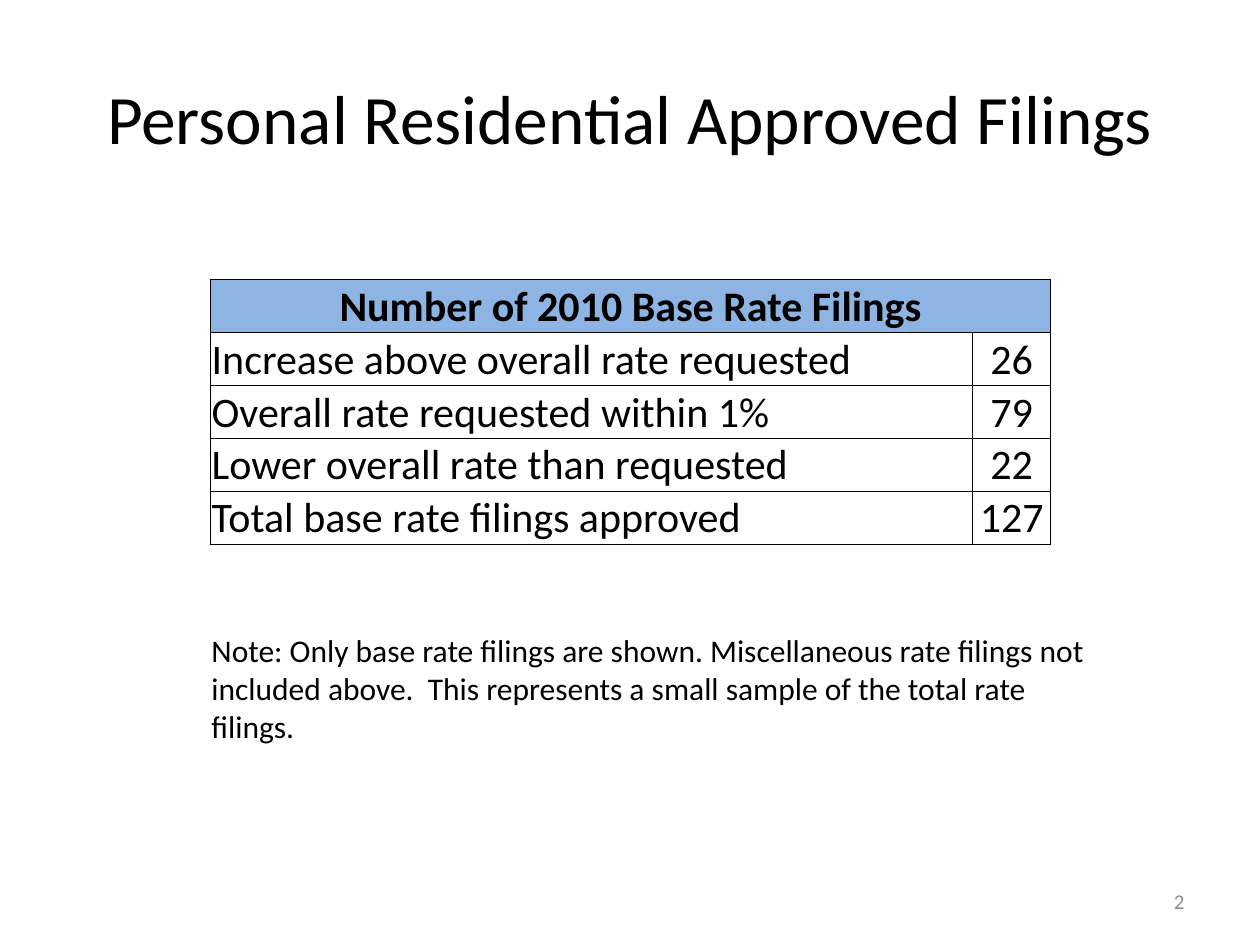
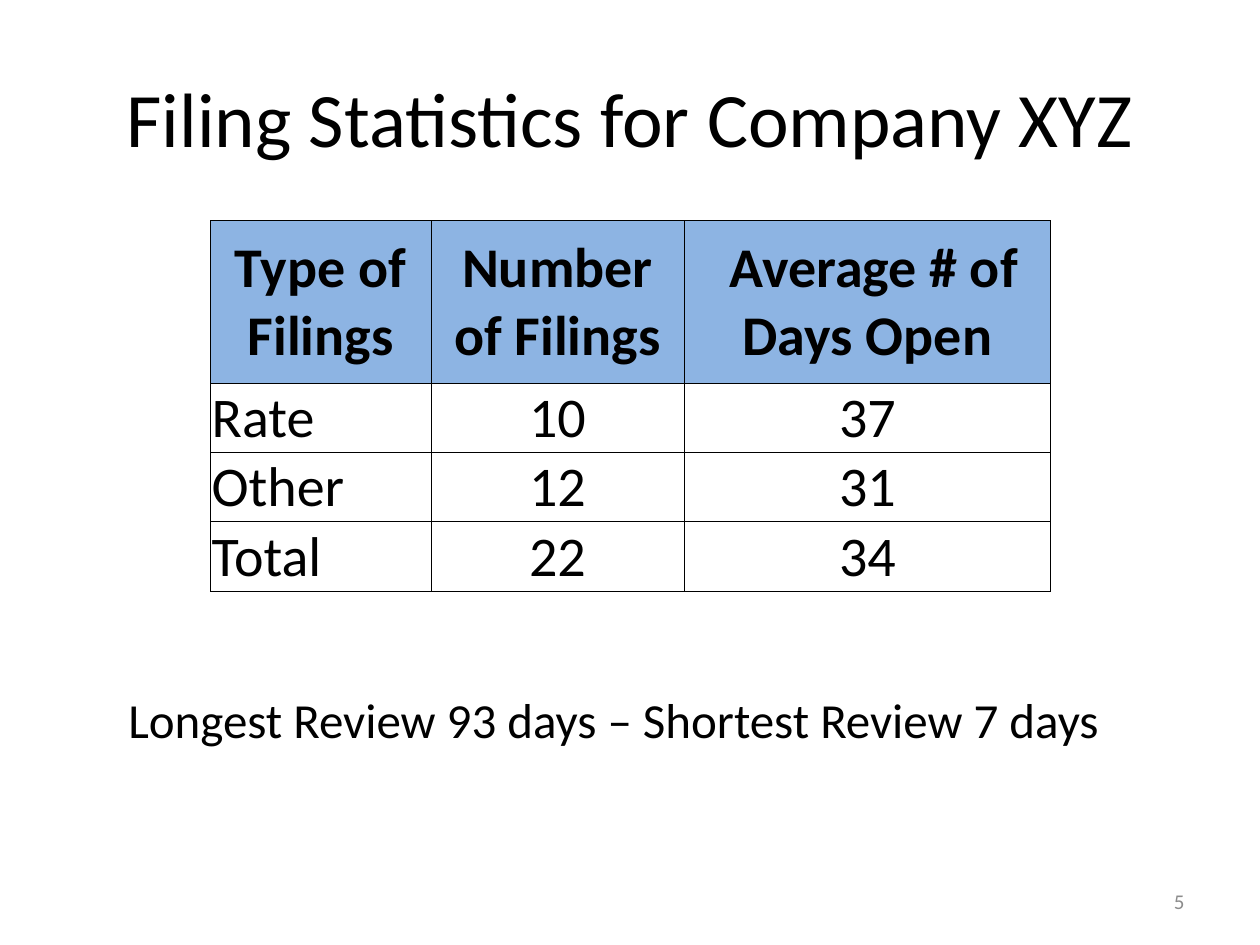
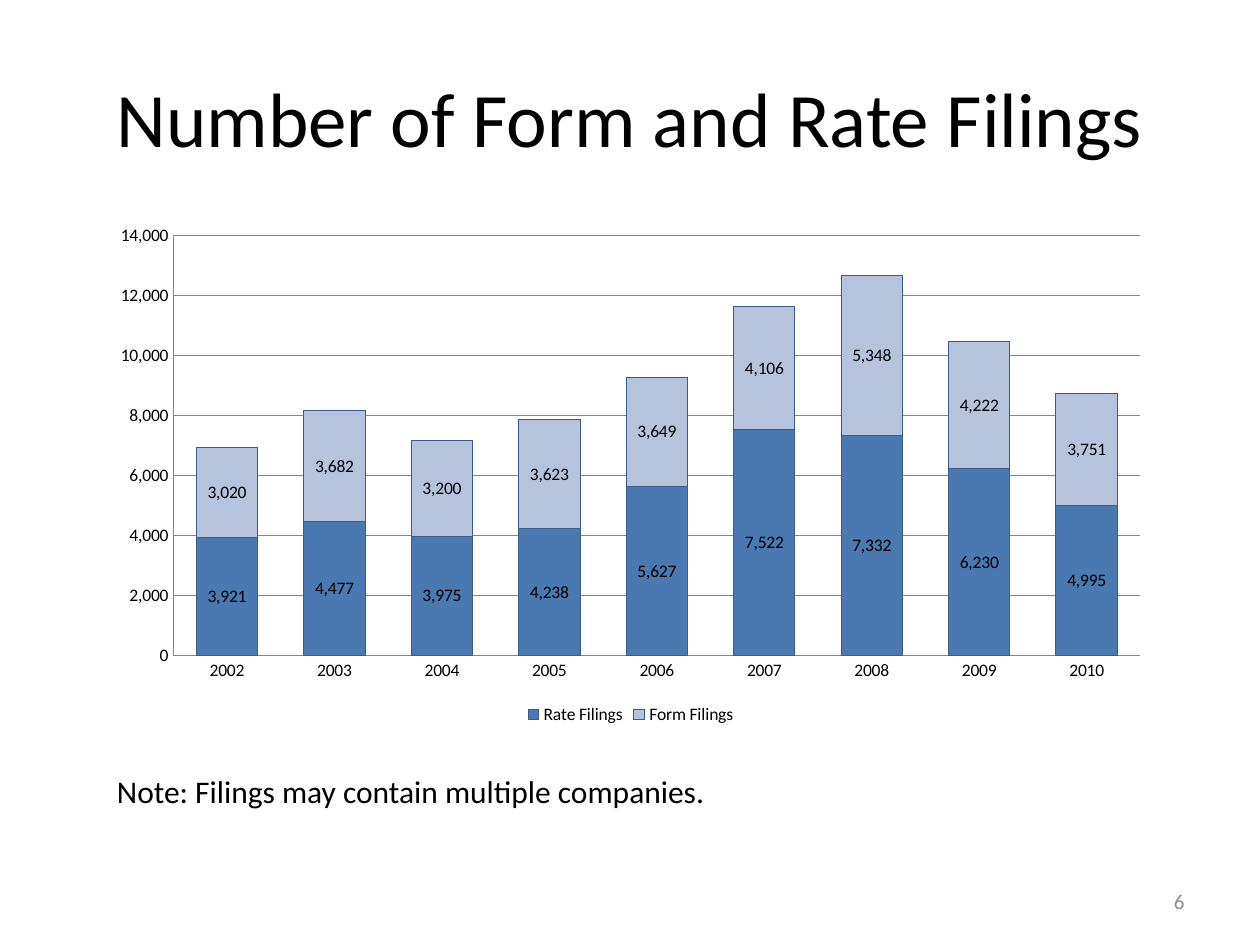
from lxml import etree
from pptx import Presentation
from pptx.chart.data import CategoryChartData
from pptx.dml.color import RGBColor
from pptx.enum.chart import XL_CHART_TYPE, XL_LABEL_POSITION, XL_LEGEND_POSITION, XL_TICK_MARK
from pptx.enum.text import MSO_ANCHOR, PP_ALIGN
from pptx.oxml import parse_xml
from pptx.oxml.ns import nsdecls
from pptx.util import Inches, Pt

STACKED = XL_CHART_TYPE.COLUMN_STACKED
LABEL_CENTER = XL_LABEL_POSITION.CENTER
LEGEND_BOTTOM = XL_LEGEND_POSITION.BOTTOM
NO_TICK = XL_TICK_MARK.NONE
MIDDLE, BOTTOM = MSO_ANCHOR.MIDDLE, MSO_ANCHOR.BOTTOM
LEFT, CENTER, RIGHT = PP_ALIGN.LEFT, PP_ALIGN.CENTER, PP_ALIGN.RIGHT

FONT = "Calibri"
BLACK = RGBColor(0x00, 0x00, 0x00)
PAGE_GRAY = RGBColor(0x8C, 0x8C, 0x8C)
HEADER_BLUE = RGBColor(0x8D, 0xB4, 0xE3)
RATE_BLUE = RGBColor(0x4A, 0x78, 0xB0)
FORM_BLUE = RGBColor(0xB5, 0xC3, 0xDC)
BAR_EDGE = RGBColor(0x38, 0x5D, 0x8A)
AXIS_GRAY = RGBColor(0x86, 0x86, 0x86)


def write(frame, text, size, align=LEFT, color=BLACK, bold=False):
    """Fill the first paragraph of a text frame with one formatted run."""
    paragraph = frame.paragraphs[0]
    paragraph.alignment = align
    run = paragraph.add_run()
    run.text = text
    run.font.name = FONT
    run.font.size = Pt(size)
    run.font.bold = bold
    run.font.color.rgb = color


def add_ruled_table(slide, rows, top, widths, heights, size, anchor):
    """Add a table with thin black rules, a blue header and centred figures."""
    table = slide.shapes.add_table(
        len(rows), len(widths), Inches(1.67), Inches(top),
        Inches(sum(widths)), Inches(sum(heights))).table
    table.horz_banding = False
    for column, width in zip(table.columns, widths):
        column.width = Inches(width)
    for r, (values, height) in enumerate(zip(rows, heights)):
        table.rows[r].height = Inches(height)
        for c in range(len(widths)):
            cell = table.cell(r, c)
            cell.vertical_anchor = anchor
            cell.margin_left = cell.margin_right = cell.margin_top = Inches(0.01)
            cell.margin_bottom = 0
            if r == 0:
                cell.fill.solid()
                cell.fill.fore_color.rgb = HEADER_BLUE
            else:
                cell.fill.background()
            properties = cell._tc.get_or_add_tcPr()
            for position, side in enumerate(("lnL", "lnR", "lnT", "lnB")):
                properties.insert(position, parse_xml(
                    f'<a:{side} {nsdecls("a")} w="{Pt(0.5)}"><a:solidFill>'
                    f'<a:srgbClr val="{BLACK}"/></a:solidFill></a:{side}>'))
            if c < len(values):
                align = LEFT if r and c == 0 else CENTER
                write(cell.text_frame, values[c], size, align, bold=r == 0)
    if len(rows[0]) == 1:
        table.cell(0, 0).merge(table.cell(0, len(widths) - 1))


prs = Presentation()
prs.slide_width, prs.slide_height = Inches(10), Inches(7.5)

# Title, title size, page number, note, note size, note box
pages = [
    ("Personal Residential Approved Filings", 39.6, "2",
     "Note: Only base rate filings are shown. Miscellaneous rate filings not "
     "included above.  This represents a small sample of the total rate filings.",
     18, (1.58, 4.96, 7.25, 1.01)),
    ("Filing Statistics for Company XYZ", 44, "5",
     "Longest Review 93 days – Shortest Review 7 days",
     28, (0.92, 5.42, 7.99, 0.57)),
    ("Number of Form and Rate Filings", 44, "6",
     "Note: Filings may contain multiple companies.",
     18, (0.83, 6.08, 6.08, 0.42)),
]
slides = []
for title, title_size, number, note, note_size, note_box in pages:
    slide = prs.slides.add_slide(prs.slide_layouts[5])
    heading = slide.shapes.title
    heading.left, heading.top = Inches(0.5), Inches(0.3)
    heading.width, heading.height = Inches(9), Inches(1.25)
    heading.text_frame.vertical_anchor = MIDDLE
    write(heading.text_frame, title, title_size, CENTER)

    page_number = slide.shapes.add_textbox(
        Inches(7.17), Inches(6.95), Inches(2.33), Inches(0.4)).text_frame
    page_number.word_wrap = True
    page_number.vertical_anchor = MIDDLE
    write(page_number, number, 12, RIGHT, PAGE_GRAY)

    remark = slide.shapes.add_textbox(*map(Inches, note_box)).text_frame
    remark.word_wrap = True
    write(remark, note, note_size)
    slides.append(slide)

approved_slide, statistics_slide, volume_slide = slides

add_ruled_table(
    approved_slide,
    [("Number of 2010 Base Rate Filings",),
     ("Increase above overall rate requested", "26"),
     ("Overall rate requested within 1%", "79"),
     ("Lower overall rate than requested", "22"),
     ("Total base rate filings approved", "127")],
    2.22, [6.05, 0.62], [0.42] * 5, 24, BOTTOM)

add_ruled_table(
    statistics_slide,
    [("Type of Filings", "Number of Filings", " Average # of Days Open"),
     ("Rate", "10", "37"),
     ("Other", "12", "31"),
     ("Total", "22", "34")],
    1.75, [1.75, 2.01, 2.91], [1.29] + [0.55] * 3, 32, MIDDLE)

filings = CategoryChartData(number_format="#,##0")
filings.categories = [str(year) for year in range(2002, 2011)]
filings.add_series("Rate Filings", (3921, 4477, 3975, 4238, 5627, 7522, 7332, 6230, 4995))
filings.add_series("Form Filings", (3020, 3682, 3200, 3623, 3649, 4106, 5348, 4222, 3751))
chart = volume_slide.shapes.add_chart(
    STACKED, Inches(0.79), Inches(1.71), Inches(8.43), Inches(4.08), filings).chart
chart.has_title = False
chart.font.name = FONT
chart.font.size = Pt(10)
chart.font.color.rgb = BLACK
chart.has_legend = True
chart.legend.position = LEGEND_BOTTOM
chart.legend.include_in_layout = False

for axis in (chart.category_axis, chart.value_axis):
    axis.major_tick_mark = axis.minor_tick_mark = NO_TICK
    axis.format.line.color.rgb = AXIS_GRAY
chart.value_axis.minimum_scale = 0
chart.value_axis.maximum_scale = 14000
chart.value_axis.major_unit = 2000
chart.value_axis.tick_labels.number_format = "#,##0"
chart.value_axis.tick_labels.number_format_is_linked = False
chart.value_axis.major_gridlines.format.line.color.rgb = AXIS_GRAY

plot = chart.plots[0]
plot.gap_width = 75
plot.overlap = 100
plot.vary_by_categories = False
for series, color in zip(plot.series, (RATE_BLUE, FORM_BLUE)):
    series.format.fill.solid()
    series.format.fill.fore_color.rgb = color
    series.format.line.color.rgb = BAR_EDGE
    series.data_labels.show_value = True
    series.data_labels.position = LABEL_CENTER

prs.save("out.pptx")
